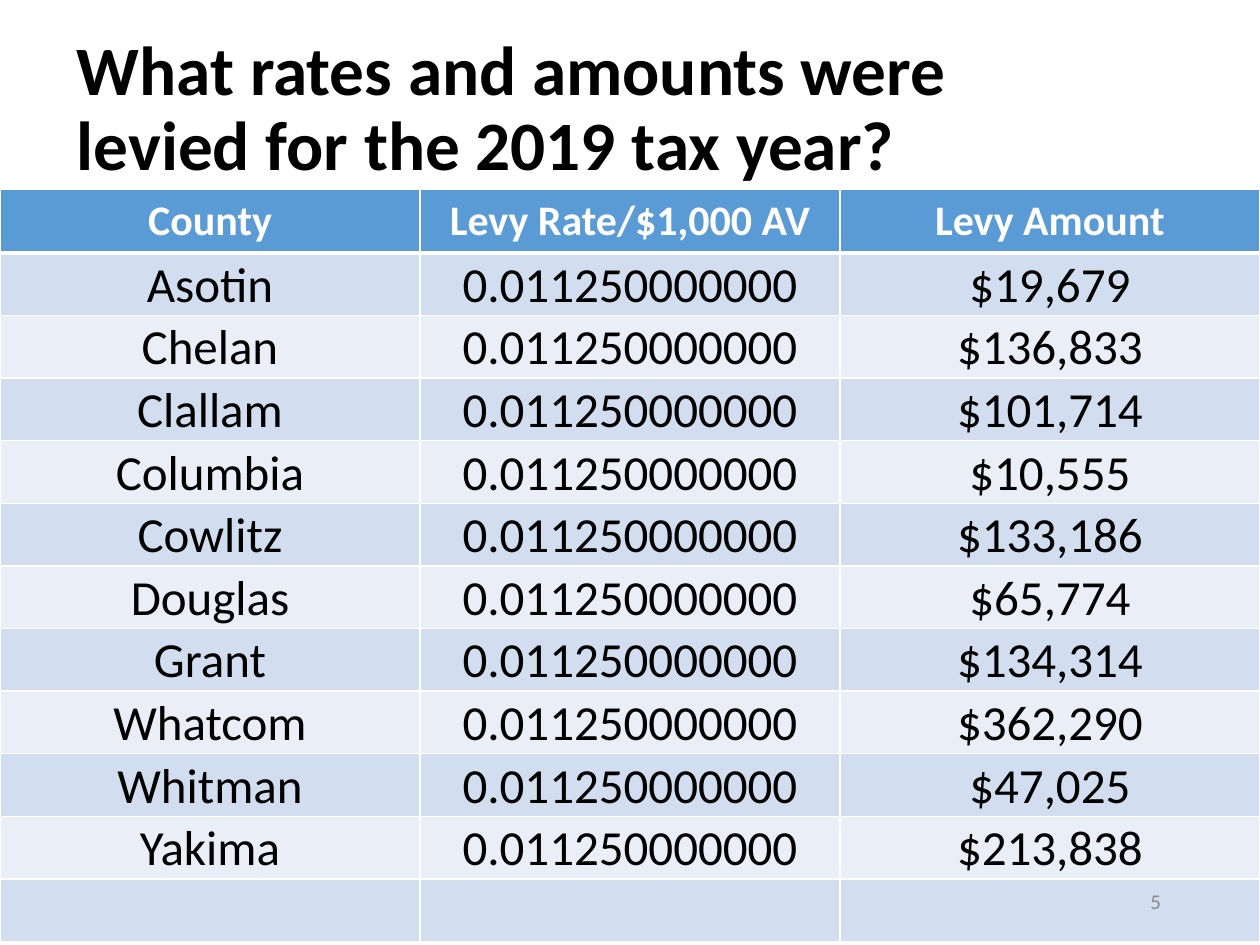
import lxml.etree
import pptx
import pptx.dml.color
import pptx.enum.text
import pptx.oxml.ns
import pptx.util

Pt = pptx.util.Pt
ALIGN = pptx.enum.text.PP_ALIGN
ANCHOR = pptx.enum.text.MSO_ANCHOR

# Content
TITLE = "What rates and amounts were levied for the 2019 tax year?"
PAGE_NUMBER = "5"
HEADER = ("County", "Levy Rate/$1,000 AV", "Levy Amount")
RATE = "0.011250000000"
LEVIES = [
    ("Asotin", "$19,679"),
    ("Chelan", "$136,833"),
    ("Clallam", "$101,714"),
    ("Columbia", "$10,555"),
    ("Cowlitz", "$133,186"),
    ("Douglas", "$65,774"),
    ("Grant", "$134,314"),
    ("Whatcom", "$362,290"),
    ("Whitman", "$47,025"),
    ("Yakima", "$213,838"),
]
ROWS = [HEADER] + [(county, RATE, amount) for county, amount in LEVIES] + [("", "", "")]

# Formats
HEADER_FILL, BANDS, RULE = "5B9BD5", ("D2DEEF", "EAEFF7"), "FFFFFF"
TITLE_FONT = {"size": Pt(39.6), "bold": True, "color": "000000"}
HEADER_FONT = {"size": Pt(24), "bold": True, "color": "FFFFFF"}
BODY_FONT = {"size": Pt(28), "bold": False, "color": "000000"}
NUMBER_FONT = {"size": Pt(12), "color": "8C8C8C"}
BODY_CELL = {
    "vertical_anchor": ANCHOR.BOTTOM,
    "margin_left": Pt(0.75),
    "margin_top": Pt(0.75),
    "margin_right": Pt(0.75),
    "margin_bottom": 0,
}
PAGE_WIDTH, PAGE_HEIGHT = 720, 540
TABLE_TOP, ROW_HEIGHT = 108, 35.8


def rgb(value):
    return pptx.dml.color.RGBColor.from_string(value)


def set_all(target, values):
    for name, value in values.items():
        setattr(target, name, value)


def write(frame, text, font, align):
    para = frame.paragraphs[0]
    para.alignment = align
    span = para.add_run()
    span.text = text
    span.font.name = "Calibri"
    for name, value in font.items():
        if name == "color":
            span.font.color.rgb = rgb(value)
        else:
            setattr(span.font, name, value)
    return para


def set_borders(cell, widths):
    """Add the left, right, top and bottom rules ahead of the cell's fill."""
    properties = cell._tc.get_or_add_tcPr()
    qn = pptx.oxml.ns.qn
    for position, (side, width) in enumerate(widths.items()):
        line = lxml.etree.Element(qn("a:ln" + side), w=str(Pt(width)))
        fill = lxml.etree.SubElement(line, qn("a:solidFill"))
        lxml.etree.SubElement(fill, qn("a:srgbClr"), val=RULE)
        properties.insert(position, line)


def add_title(page):
    title = page.shapes.title
    set_all(title, {"left": Pt(36.7), "top": Pt(31.7), "width": Pt(549.4), "height": Pt(62.6)})
    set_all(title.text_frame, {
        "word_wrap": True,
        "auto_size": pptx.enum.text.MSO_AUTO_SIZE.NONE,
        "vertical_anchor": ANCHOR.MIDDLE,
    })
    write(title.text_frame, TITLE, TITLE_FONT, ALIGN.LEFT).line_spacing = 0.9


def add_levy_table(page):
    table = page.shapes.add_table(
        len(ROWS), len(HEADER), 0, Pt(TABLE_TOP), Pt(PAGE_WIDTH), Pt(ROW_HEIGHT * len(ROWS))
    ).table
    for index, texts in enumerate(ROWS):
        table.rows[index].height = Pt(ROW_HEIGHT)
        is_header = index == 0
        for cell, text in zip(table.rows[index].cells, texts):
            cell.fill.solid()
            cell.fill.fore_color.rgb = rgb(HEADER_FILL if is_header else BANDS[(index - 1) % 2])
            # The rule under the header is heavier than the rest
            set_borders(cell, {
                "L": 1, "R": 1,
                "T": 3 if index == 1 else 1,
                "B": 3 if is_header else 1,
            })
            if text:
                write(cell.text_frame, text, HEADER_FONT if is_header else BODY_FONT, ALIGN.CENTER)
                if not is_header:
                    set_all(cell, BODY_CELL)


def add_page_number(page):
    box = page.shapes.add_textbox(Pt(508.5), Pt(500.5), Pt(162), Pt(28.75))
    set_all(box.text_frame, {"word_wrap": True, "vertical_anchor": ANCHOR.MIDDLE})
    write(box.text_frame, PAGE_NUMBER, NUMBER_FONT, ALIGN.RIGHT)


def main():
    deck = pptx.Presentation()
    set_all(deck, {"slide_width": Pt(PAGE_WIDTH), "slide_height": Pt(PAGE_HEIGHT)})
    page = deck.slides.add_slide(deck.slide_layouts.get_by_name("Title Only"))
    add_title(page)
    add_levy_table(page)
    add_page_number(page)
    deck.save("out.pptx")


if __name__ == "__main__":
    main()
